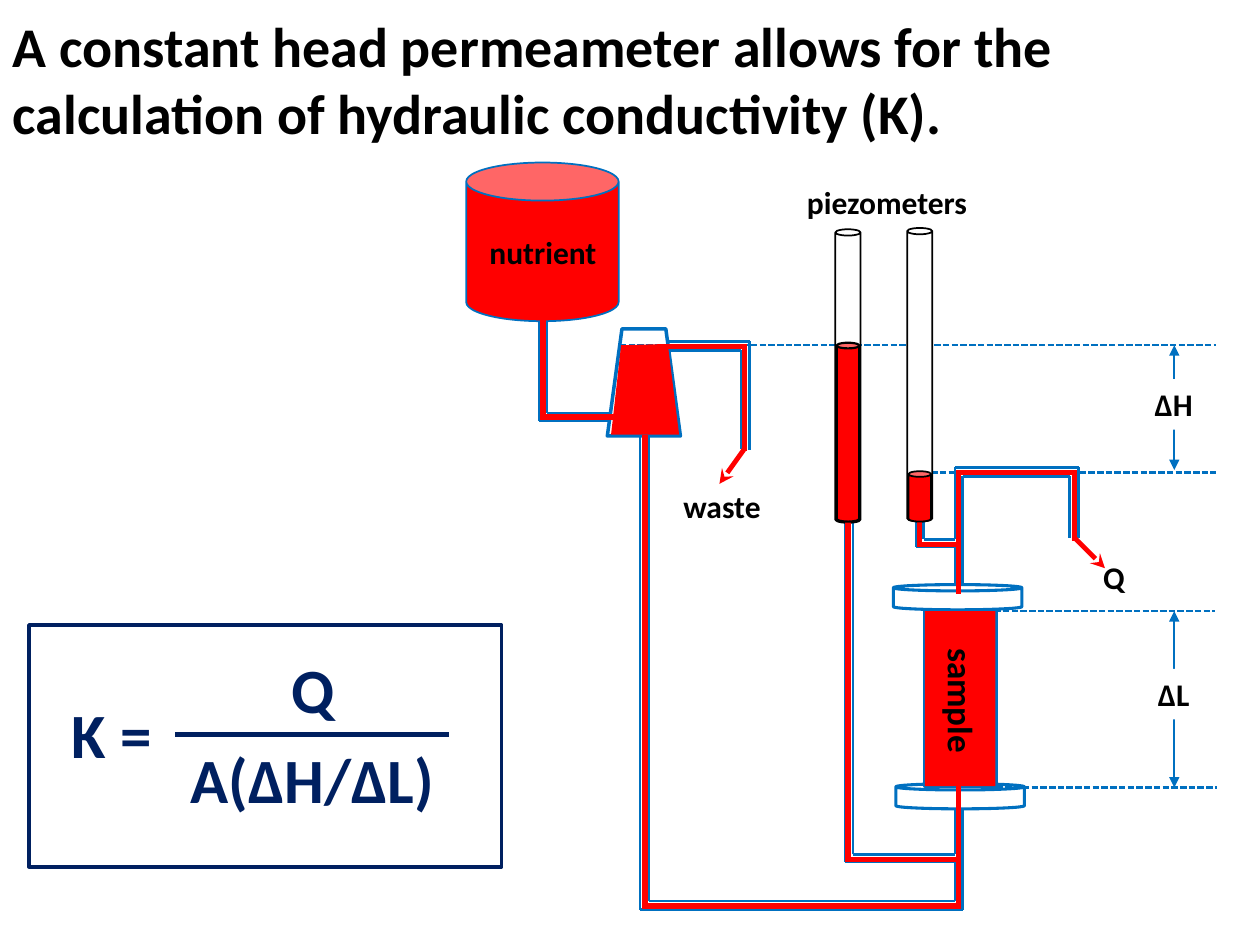
from itertools import pairwise

from lxml.etree import SubElement
from pptx import Presentation
from pptx.dml.color import RGBColor
from pptx.enum.dml import MSO_LINE_DASH_STYLE as Dash
from pptx.enum.shapes import MSO_CONNECTOR, MSO_SHAPE as Shape
from pptx.enum.text import MSO_ANCHOR, PP_ALIGN as Align
from pptx.oxml.ns import qn
from pptx.util import Pt

PX = 9144  # EMU in one px, 100 px to the inch
WHITE = RGBColor(0xFF, 0xFF, 0xFF)
BLACK = RGBColor(0, 0, 0)
RED = RGBColor(0xFF, 0, 0)
BLUE = RGBColor(0, 0x70, 0xC0)
NAVY = RGBColor(0, 0x20, 0x60)
LABEL_FONT = {"name": "Calibri", "size": Pt(18), "bold": True}

# Blue pipe walls, each a run of corner points
PIPE_WALLS = [
    [(758, 633), (758, 678), (677, 678), (677, 294)],
    [(671, 292), (671, 684), (758, 684), (758, 715), (515, 715), (515, 334)],
    [(508, 334), (508, 722), (764, 722), (764, 643)],
    [(727, 363), (727, 434), (758, 434), (758, 467)],
    [(733, 361), (733, 428), (758, 428), (758, 371), (856, 371), (856, 427)],
    [(764, 467), (764, 378), (849, 378), (849, 427)],
    [(428, 251), (428, 334), (498, 334)],
    [(434, 247), (434, 328), (496, 328)],
    [(588, 356), (588, 278), (527, 278)],
    [(595, 357), (595, 271), (527, 271)],
]
# Red fluid inside the pipes
FLUID = [
    [(512, 347), (512, 719), (761, 719), (761, 625)],
    [(431, 254), (431, 331), (485, 331)],
    [(673, 415), (673, 682), (758, 682)],
    [(761, 469), (761, 375), (853, 375), (853, 427)],
    [(730, 415), (730, 432), (760, 432)],
    [(532, 275), (591, 275), (591, 356)],
]
LEVELS = [(492, 274, 965), (739, 375, 965), (789, 485, 964), (791, 625, 966)]


def px(*lengths):
    return [length * PX for length in lengths]


def style_text(frame, text, align=Align.CENTER, color=BLACK, **changes):
    frame.vertical_anchor = MSO_ANCHOR.TOP
    paragraph = frame.paragraphs[0]
    paragraph.alignment = align
    run = paragraph.add_run()
    run.text = text
    for key, value in {**LABEL_FONT, **changes}.items():
        setattr(run.font, key, value)
    run.font.color.rgb = color


def add_label(slide, text, box, fill=None, rotation=0, **style):
    label = slide.shapes.add_textbox(*px(*box))
    label.rotation = rotation
    label.text_frame.word_wrap = False
    if fill is not None:
        label.fill.solid()
        label.fill.fore_color.rgb = fill
    style_text(label.text_frame, text, **style)


def paint(shape, fill, line, width):
    shape.shadow.inherit = False
    if fill is None:
        shape.fill.background()
    else:
        shape.fill.solid()
        shape.fill.fore_color.rgb = fill
    if line is None:
        shape.line.fill.background()
    else:
        shape.line.color.rgb = line
        shape.line.width = Pt(width)


def add_shape(slide, kind, box, fill, line=None, width=1, rotation=0):
    shape = slide.shapes.add_shape(kind, *px(*box))
    shape.rotation = rotation
    paint(shape, fill, line, width)


def add_line(slide, start, end, color, width, dash=None, head=None, tail=None, cap="flat"):
    connector = slide.shapes.add_connector(MSO_CONNECTOR.STRAIGHT, *px(*start, *end))
    format_values = {"width": Pt(width), "dash_style": dash}
    for key, value in format_values.items():
        setattr(connector.line, key, value)
    connector.line.color.rgb = color
    properties = connector._element.spPr
    outline = properties.get_or_add_ln()
    outline.set("cap", cap)
    for tag, arrow in (("a:headEnd", head), ("a:tailEnd", tail)):
        if arrow:
            SubElement(outline, qn(tag), type=arrow)
    SubElement(properties, qn("a:effectLst"))


def add_pipes(slide, pipes, color, width, cap="flat"):
    for points in pipes:
        for start, end in pairwise(points):
            add_line(slide, start, end, color, width, cap=cap)


def add_title(slide):
    title = slide.shapes.title
    box = dict(zip(("left", "top", "width", "height"), px(0, 4, 983, 118)))
    for key, value in box.items():
        setattr(title, key, value)
    title.text_frame.word_wrap = True
    style_text(title.text_frame,
               "A constant head permeameter allows for the calculation of "
               "hydraulic conductivity (K).", align=Align.LEFT, size=Pt(32))


def add_apparatus(slide):
    # Pipe walls and vessels
    add_pipes(slide, PIPE_WALLS, BLUE, 1.5)
    add_shape(slide, Shape.CAN, (711, 622, 102, 20), WHITE, BLUE, 1.75)
    add_shape(slide, Shape.RECTANGLE, (734, 478, 57, 146), WHITE, BLUE, 2)
    add_shape(slide, Shape.FLOWCHART_MANUAL_OPERATION, (482, 261, 58, 85),
              WHITE, BLUE, 2, rotation=180)
    add_shape(slide, Shape.CAN, (370, 129, 121, 126), RED, BLUE)
    # Dashed levels and piezometer tubes
    for left, y, right in LEVELS:
        add_line(slide, (left, y), (right, y), BLUE, 1.25, dash=Dash.SQUARE_DOT)
    for left, top in ((720, 181), (663, 182)):
        add_shape(slide, Shape.CAN, (left, top, 20, 233), WHITE, BLACK)
    add_shape(slide, Shape.CAN, (709, 464, 102, 20), WHITE, BLUE, 1.75)
    # Sample and fluid
    add_shape(slide, Shape.RECTANGLE, (734, 485, 56, 139), RED)
    add_pipes(slide, FLUID, RED, 3, cap="sq")
    add_shape(slide, Shape.CAN, (664, 272, 18, 142), RED, BLACK, 1.25)
    add_shape(slide, Shape.CAN, (721, 374, 18, 40), RED, BLACK)
    builder = slide.shapes.build_freeform(*px(539, 345), scale=1)
    builder.add_line_segments([px(485, 345), px(493, 274), px(530, 273)], close=True)
    paint(builder.convert_to_shape(), RED, None, 0)


def add_annotations(slide):
    # Measured heights
    for top, bottom in ((274, 373), (485, 625)):
        add_line(slide, (932, top), (932, bottom), BLUE, 1, head="triangle", tail="triangle")
    # Outflow arrows
    for start, end in (((591, 356), (571, 384)), ((853, 427), (877, 451))):
        add_line(slide, start, end, RED, 2.75, tail="stealth")
    # Labels
    add_label(slide, "ΔH", (906, 301, 51, 40), fill=WHITE)
    add_label(slide, "ΔL", (909, 531, 45, 40), fill=WHITE)
    add_label(slide, "nutrient", (378, 180, 106, 40))
    add_label(slide, "piezometers", (630, 140, 148, 40))
    add_label(slide, "waste", (532, 382, 82, 40))
    add_label(slide, "Q", (865, 438, 38, 40))
    add_label(slide, "sample", (711, 534, 104, 44), rotation=90, size=Pt(20))


def add_equation(slide):
    add_shape(slide, Shape.RECTANGLE, (23, 496, 375, 192), None, NAVY, 2)
    for text, box, align in (("K =", (47, 547, 96, 71), Align.LEFT),
                             ("Q", (221, 511, 55, 71), Align.CENTER),
                             ("A(∆H/∆L)", (140, 583, 216, 71), Align.CENTER)):
        add_label(slide, text, box, align=align, color=NAVY, size=Pt(36))
    add_line(slide, (139, 583), (356, 583), NAVY, 2.75)


def main():
    presentation = Presentation()
    presentation.slide_width, presentation.slide_height = px(1000, 750)
    slide = presentation.slides.add_slide(presentation.slide_layouts[5])
    add_title(slide)
    add_apparatus(slide)
    add_annotations(slide)
    add_equation(slide)
    presentation.save("out.pptx")


if __name__ == "__main__":
    main()
